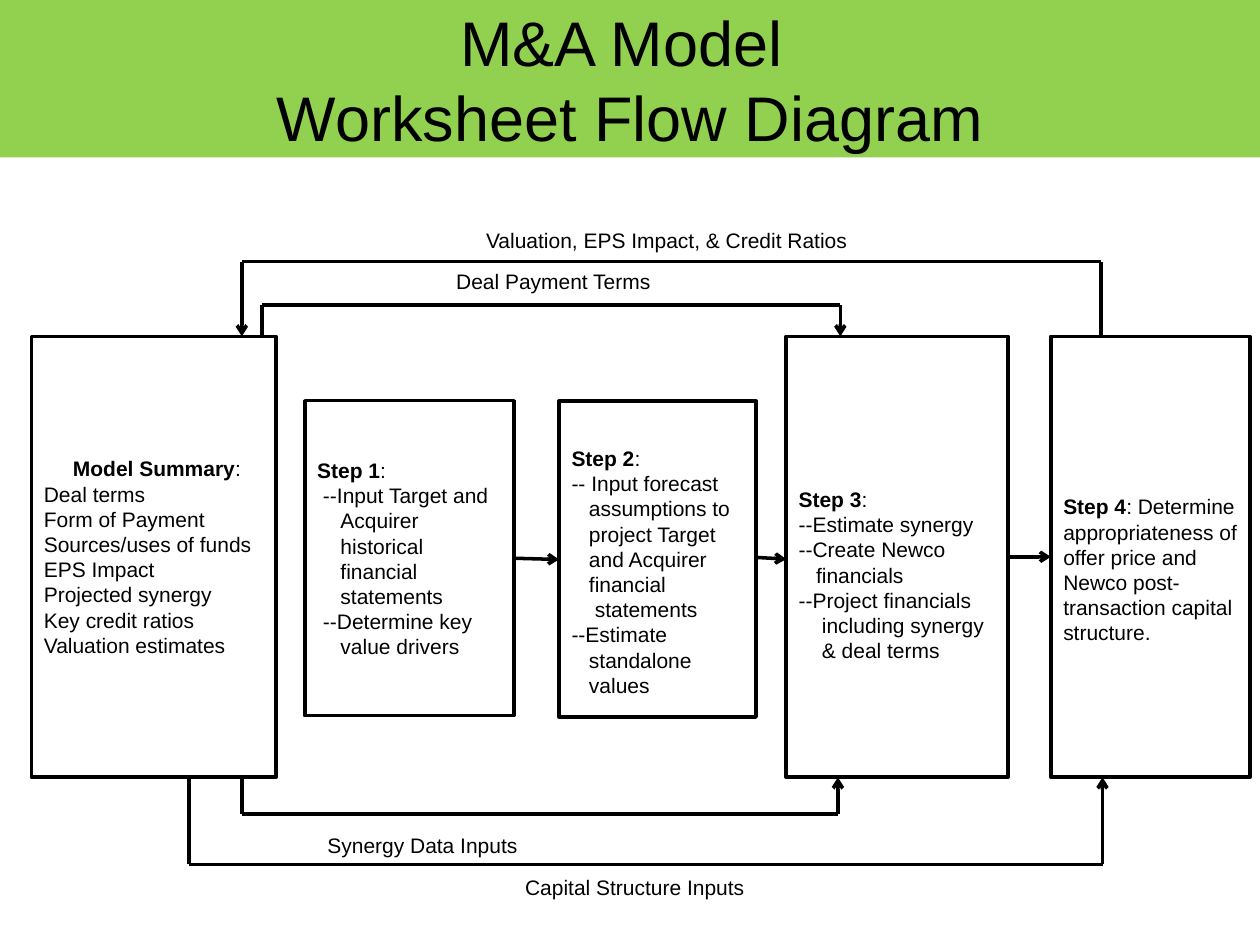
from dataclasses import dataclass
from itertools import pairwise

from lxml.etree import SubElement
from pptx import Presentation
from pptx.dml.color import RGBColor
from pptx.enum.shapes import MSO_CONNECTOR as Conn, MSO_SHAPE as Kind
from pptx.enum.text import MSO_ANCHOR as Anchor, MSO_AUTO_SIZE as Fit, PP_ALIGN as Align
from pptx.oxml.ns import qn
from pptx.util import Pt

BLACK = RGBColor(0x00, 0x00, 0x00)
WHITE = RGBColor(0xFF, 0xFF, 0xFF)
GREEN = RGBColor(0x92, 0xD0, 0x50)
FONT = "Arial"
SIZE = 12
SPACE = 3.33  # width of one space, the unit of indent
TOP, BASE = 192.2, 444.2  # edges of the tall boxes


@dataclass
class Box:
    left: float
    top: float
    width: float
    height: float
    head: str
    tail: str  # plain text after the bold head
    lines: list[tuple[int, str]]  # indent in spaces, text
    inset: int = 0  # indent of the head
    drop: float = 0  # extra margin above the text


@dataclass
class Route:
    points: list[tuple[float, float]]
    arrow: bool = True


@dataclass
class Label:
    left: float
    top: float
    width: float
    text: str


BOXES = [
    Box(18, TOP, 139.7, BASE - TOP, "Model Summary", ":", [
        (0, "Deal terms"), (0, "Form of Payment"), (0, "Sources/uses of funds"),
        (0, "EPS Impact"), (0, "Projected synergy"), (0, "Key credit ratios"),
        (0, "Valuation estimates")], inset=5),
    Box(174.2, 229, 119.5, 180, "Step 1", ":", [
        (1, "--Input Target and"), (4, "Acquirer"), (4, "historical"),
        (4, "financial"), (4, "statements"), (1, "--Determine key"),
        (4, "value drivers")]),
    Box(319.5, 229, 112.5, 180.7, "Step 2", ":", [
        (0, "-- Input forecast"), (3, "assumptions to"), (3, "project Target"),
        (3, "and Acquirer"), (3, "financial"), (4, "statements"),
        (0, "--Estimate"), (3, "standalone"), (3, "values")], drop=14.4),
    Box(449.3, TOP, 126.7, BASE - TOP, "Step 3", ":", [
        (0, "--Estimate synergy"), (0, "--Create Newco"), (3, "financials"),
        (0, "--Project financials"), (4, "including synergy"),
        (4, "& deal terms")], drop=20.4),
    Box(600.5, TOP, 113.8, BASE - TOP, "Step 4",
        ": Determine appropriateness of offer price and Newco "
        "post-transaction capital structure.", [], drop=14.4),
]

ROUTES = [
    # Loops below and above the boxes
    Route([(138.2, BASE), (138.2, 465.1), (478.8, 465.1), (478.8, BASE)]),
    Route([(108, BASE), (108, 493.9), (630, 493.9), (630, BASE)]),
    Route([(149.8, TOP), (149.8, 174.2), (480.2, 174.2), (480.2, TOP)]),
    Route([(629.3, TOP), (629.3, 149.5), (138.2, 149.5), (138.2, TOP)]),
    # Step to step
    Route([(293.3, 319), (319.5, 319.7)]),
    Route([(431.5, 318.5), (449.3, 319.5)]),
    Route([(576, 318.2), (600.5, 318.2)]),
]

LABELS = [
    Label(180, 472.3, 156, "Synergy Data Inputs"),
    Label(293, 496.1, 156, "Capital Structure Inputs"),
    Label(253.6, 149.8, 165, "Deal Payment Terms"),
    Label(270.7, 126.7, 233, "Valuation, EPS Impact, & Credit Ratios"),
]


def style(par, size: float = SIZE, align=Align.LEFT, indent: int = 0) -> None:
    par.alignment = align
    par.font.name = FONT
    par.font.size = Pt(size)
    par.font.color.rgb = BLACK
    if indent:
        props = par._p.get_or_add_pPr()
        props.set("marL", str(Pt(indent * SPACE)))
        props.set("indent", "0")


def draw_title(slide, text: str) -> None:
    title = slide.shapes.title
    title.left, title.top, title.width, title.height = Pt(0), Pt(0), Pt(720), Pt(90)
    title.fill.solid()
    title.fill.fore_color.rgb = GREEN
    frame = title.text_frame
    frame.text = text
    frame.auto_size = Fit.NONE
    frame.vertical_anchor = Anchor.MIDDLE
    style(frame.paragraphs[0], 36, Align.CENTER)


def draw_box(slide, box: Box) -> None:
    shape = slide.shapes.add_shape(
        Kind.RECTANGLE, Pt(box.left), Pt(box.top), Pt(box.width), Pt(box.height))
    shape.shadow.inherit = False
    shape.fill.solid()
    shape.fill.fore_color.rgb = WHITE
    shape.line.color.rgb = BLACK
    shape.line.width = Pt(2)
    frame = shape.text_frame
    frame.word_wrap = True
    frame.vertical_anchor = Anchor.MIDDLE
    frame.margin_top = Pt(3.6 + box.drop)
    par = frame.paragraphs[0]
    style(par, indent=box.inset)
    for text, bold in ((box.head, True), (box.tail, False)):
        run = par.add_run()
        run.text = text
        run.font.bold = bold
    for indent, text in box.lines:
        par = frame.add_paragraph()
        par.text = text
        style(par, indent=indent)


def draw_route(slide, route: Route) -> None:
    for (ax, ay), (bx, by) in pairwise(route.points):
        line = slide.shapes.add_connector(
            Conn.STRAIGHT, Pt(ax), Pt(ay), Pt(bx), Pt(by))
        line.line.color.rgb = BLACK
        line.line.width = Pt(2)
        props = line._element.spPr
        SubElement(props, qn("a:effectLst"))
    # The last segment carries the arrowhead
    if route.arrow:
        SubElement(props.find(qn("a:ln")), qn("a:tailEnd"), type="arrow")


def draw_label(slide, label: Label) -> None:
    area = slide.shapes.add_textbox(
        Pt(label.left), Pt(label.top), Pt(label.width), Pt(21.8))
    frame = area.text_frame
    frame.word_wrap = True
    frame.text = label.text
    style(frame.paragraphs[0])


def main() -> None:
    deck = Presentation()
    deck.slide_width, deck.slide_height = Pt(720), Pt(540)
    slide = deck.slides.add_slide(deck.slide_layouts[5])
    draw_title(slide, "M&A Model \vWorksheet Flow Diagram")
    for box in BOXES:
        draw_box(slide, box)
    for route in ROUTES:
        draw_route(slide, route)
    for label in LABELS:
        draw_label(slide, label)
    deck.save("out.pptx")


if __name__ == "__main__":
    main()
